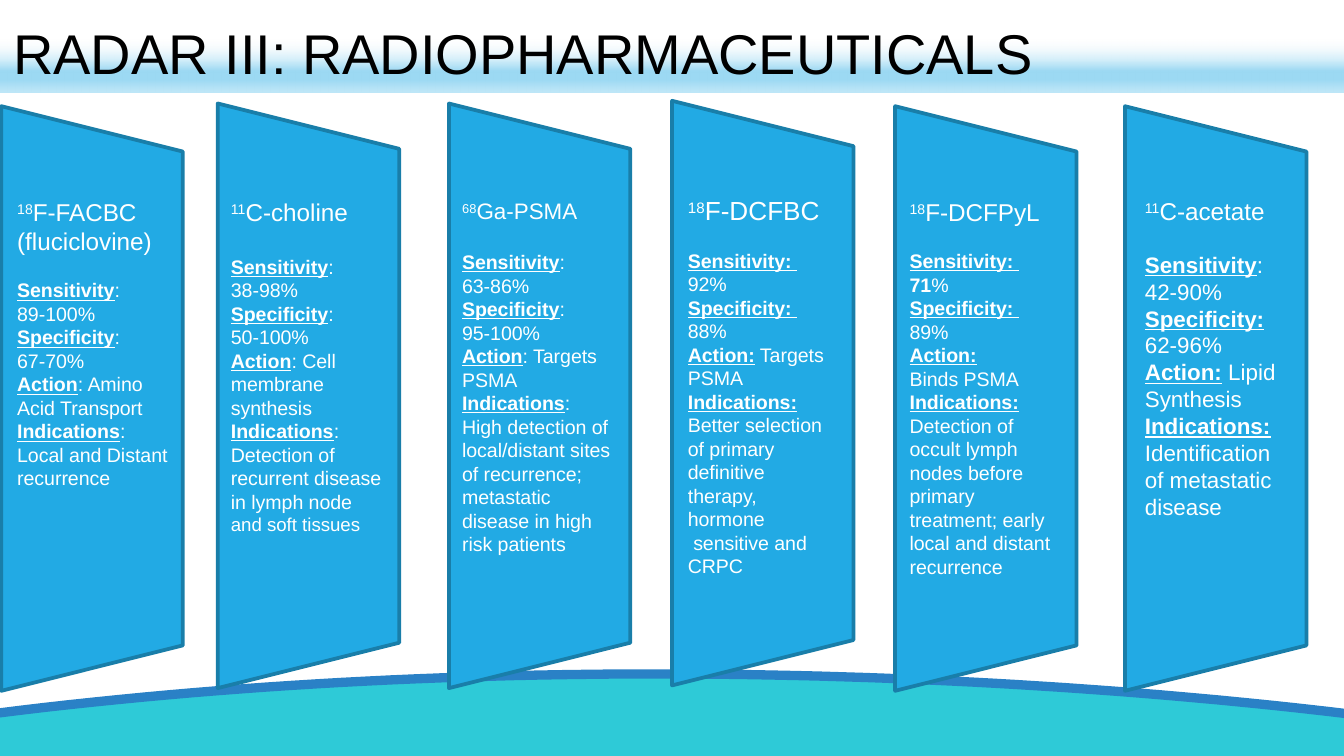
"""Build the radiopharmaceuticals comparison slide."""
from lxml import etree
from pptx import Presentation
from pptx.dml.color import RGBColor
from pptx.enum import shapes, text
from pptx.oxml.ns import qn
from pptx.util import Inches, Pt

TITLE = "RADAR III: RADIOPHARMACEUTICALS"
HUES = {"panel": "22AAE4", "edge": "197EA9", "sea": "2ECAD7", "wave": "2A81C6",
        "white": "FFFFFF", "black": "000000"}
STOPS = [(35, "F4FBFE", 0), (73, "9CD9F3", 100), (83, "9CD9F3", 100), (97, "BDE6F7", 100)]
SEA = [(-0.04, 5.32), (3.64, 4.87), (6.93, 4.98), (10, 5.31)]
WAVE = [(-0.05, 5.31), (3.66, 4.84), (7.43, 5), (10.02, 5.31)]
PANEL = (1.35, 4.35)
AGENTS = [
    {"panel": (0.01, 0.79), "box": (0.03, 1.42, 1.33, 2.31), "sizes": (13, 10.5, 10.5),
     "mass": "18", "name": ["F-FACBC", "(fluciclovine)"],
     "facts": ["*Sensitivity*:", "89-100%", "*Specificity*:", "67-70%",
               "*Action*: Amino Acid Transport",
               "*Indications*: Local and Distant recurrence"]},
    {"panel": (1.62, 0.77), "box": (1.62, 1.42, 1.33, 2.65), "sizes": (13, 13, 10.5),
     "mass": "11", "name": ["C-choline"],
     "facts": ["*Sensitivity*:", "38-98%", "*Specificity*:", "50-100%",
               "*Action*: Cell membrane synthesis",
               "*Indications*: Detection of recurrent disease in lymph node **~and soft tissues"]},
    {"panel": (3.34, 0.77), "box": (3.34, 1.42, 1.33, 2.8), "sizes": (12, 12, 10.5),
     "mass": "68", "name": ["Ga-PSMA"],
     "facts": ["*Sensitivity*:", "63-86%", "*Specificity*:", "95-100%",
               "*Action*: Targets PSMA", "*Indications*:",
               "High detection of local/distant sites of recurrence; metastatic "
               "disease in high risk patients"]},
    {"panel": (5, 0.75), "box": (5.02, 1.4, 1.33, 2.99), "sizes": (14, 10.5, 10.5),
     "mass": "18", "name": ["F-DCFBC"],
     "facts": ["*Sensitivity: *", "92%", "*Specificity: *", "88%",
               "*Action:* Targets PSMA",
               "*Indications:* Better selection of primary definitive",
               "therapy,", "hormone", " sensitive and CRPC"]},
    {"panel": (6.66, 0.79), "box": (6.67, 1.42, 1.33, 2.97), "sizes": (13, 10.5, 10.5),
     "mass": "18", "name": ["F-DCFPyL"],
     "facts": ["*Sensitivity: *", "*71*%", "*Specificity: *", "89%", "*Action:*", "Binds PSMA",
               "*Indications:* Detection of occult lymph nodes before primary "
               "treatment; early local and distant recurrence"]},
    {"panel": (8.37, 0.79), "box": (8.42, 1.41, 1.18, 2.54), "sizes": (13, 12, 12),
     "mass": "11", "name": ["C-acetate"],
     "facts": ["*Sensitivity*: 42-90%", "*Specificity:* 62-96%", "*Action:* Lipid Synthesis",
               "*Indications:* Identification of metastatic disease"]},
]


def hue(name):
    return RGBColor.from_string(HUES[name])


def style(font, size, name):
    font.name, font.size = "Arial", Pt(size)
    font.color.rgb = hue(name)


def paint(shape, fill, line=None, width=0):
    shape.shadow.inherit = False
    if fill:
        shape.fill.solid()
        shape.fill.fore_color.rgb = hue(fill)
    else:
        shape.fill.background()
    if line:
        shape.line.color.rgb = hue(line)
        shape.line.width = Pt(width)
    else:
        shape.line.fill.background()


def curve(knots, steps=60):
    pts = []
    for i in range(steps + 1):
        t = i / steps
        mix = ((1 - t) ** 3, 3 * t * (1 - t) ** 2, 3 * t * t * (1 - t), t ** 3)
        pts.append(tuple(sum(m * k[a] for m, k in zip(mix, knots)) for a in (0, 1)))
    return pts


def trace(tree, pts, close):
    pts = [(Inches(x), Inches(y)) for x, y in pts]
    pen = tree.build_freeform(*pts[0])
    pen.add_line_segments(pts[1:], close=close)
    return pen.convert_to_shape()


def add_panel(tree, agent):
    wide, tall = PANEL
    left, top = agent["panel"]
    shift = (tall - wide) / 2
    shape = tree.add_shape(shapes.MSO_SHAPE.TRAPEZOID, Inches(left - shift),
                           Inches(top + shift), Inches(tall), Inches(wide))
    shape.rotation = 90
    paint(shape, "panel", "edge", 2)


def add_text(tree, agent):
    frame = tree.add_textbox(*map(Inches, agent["box"])).text_frame
    frame.word_wrap = True
    head, gap, body = agent["sizes"]
    names = agent["name"]
    for i, line in enumerate(names + agent["facts"]):
        para = frame.paragraphs[0] if i == 0 else frame.add_paragraph()
        style(para.font, head if i < len(names) else body, "white")
        if i == 0:
            mass = para.add_run()
            mass.text = agent["mass"]
            mass.font._element.set("baseline", "30000")
        if i == len(names):
            para.space_before = Pt(gap * 1.15)
        for j, part in enumerate(line.split("*")):
            if part:
                run = para.add_run()
                run.text = part.lstrip("~")
                if part.startswith("~"):
                    run.font.size = Pt(10)
                if j % 2:
                    run.font.bold = True
                    run.font.underline = not part.isdigit()


def add_title(tree):
    bar = tree.add_shape(shapes.MSO_SHAPE.RECTANGLE, 0, Inches(0.08), Inches(10.04), Inches(0.61))
    paint(bar, None)
    bar.fill.gradient()
    bar.fill.gradient_angle = 270
    stops = bar._element.spPr.find(".//" + qn("a:gsLst"))
    for old in list(stops):
        stops.remove(old)
    for place, tint, alpha in STOPS:
        stop = etree.SubElement(stops, qn("a:gs"), pos=str(place * 1000))
        color = etree.SubElement(stop, qn("a:srgbClr"), val=tint)
        etree.SubElement(color, qn("a:alpha"), val=str(alpha * 1000))
    bar.text_frame.word_wrap = True
    para = bar.text_frame.paragraphs[0]
    para.text = TITLE
    para.alignment = text.PP_ALIGN.LEFT
    style(para.font, 30, "black")


def main():
    deck = Presentation()
    deck.slide_width, deck.slide_height = Inches(10), Inches(10 * 9 / 16)
    tree = deck.slides.add_slide(deck.slide_layouts[6]).shapes
    paint(trace(tree, curve(SEA) + [(10, 5.65), (-0.04, 5.65)], True), "sea")
    paint(trace(tree, curve(WAVE), False), None, "wave", 5)
    for agent in reversed(AGENTS):
        add_panel(tree, agent)
    for agent in reversed(AGENTS):
        add_text(tree, agent)
    add_title(tree)
    deck.save("out.pptx")


if __name__ == "__main__":
    main()
